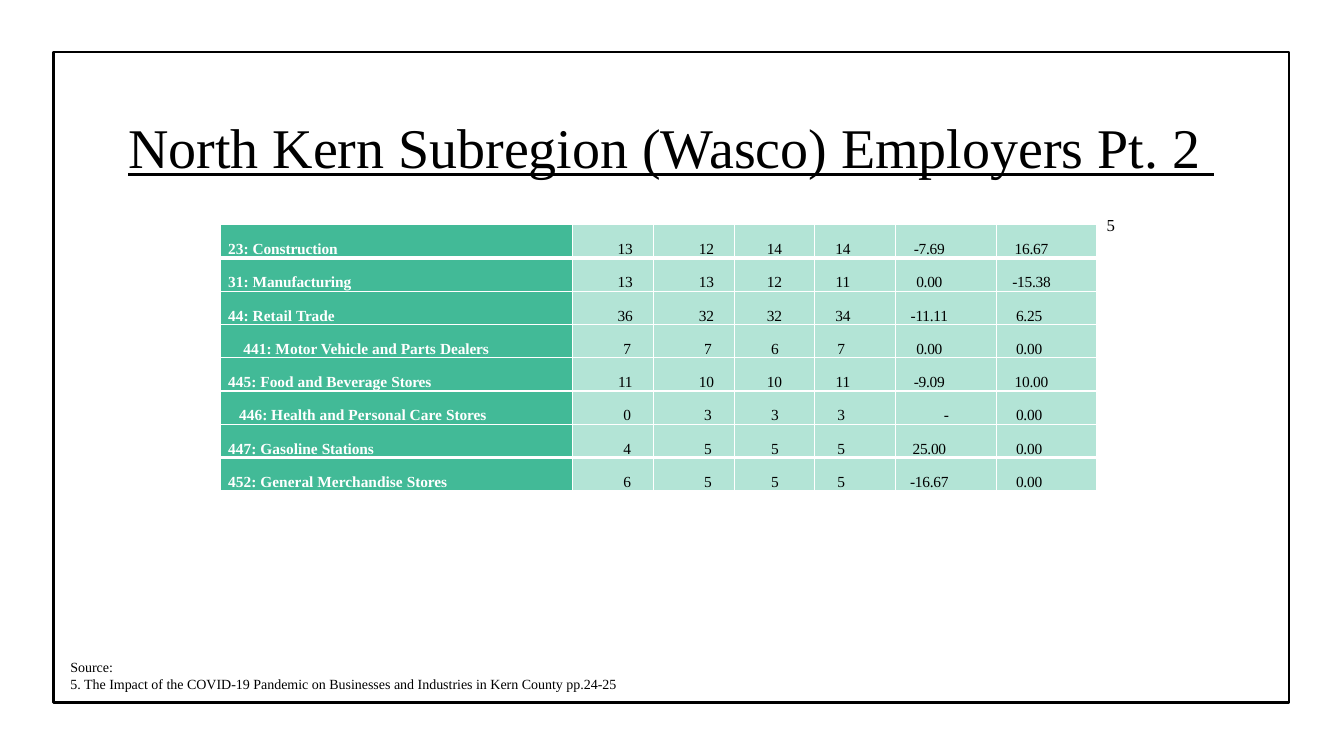
from lxml.etree import SubElement
from pptx import Presentation
from pptx.dml.color import RGBColor
from pptx.enum.shapes import MSO_SHAPE as Shape
from pptx.enum.text import MSO_ANCHOR as Anchor, PP_ALIGN as Align
from pptx.oxml.ns import qn
from pptx.util import Pt

COLORS = {"ink": "000000", "white": "FFFFFF", "label": "42BA97", "value": "B3E4D6"}
FONT = "Times New Roman"
TITLE = "North Kern Subregion (Wasco) Employers Pt. 2 "
SOURCE = [
    "Source:",
    "5. The Impact of the COVID-19 Pandemic on Businesses and Industries in Kern County pp.24-25",
]
FOOTNOTE_MARK = "5"

# Label start, label last word, values
EMPLOYERS = [
    ("23: ", "Construction", ["13", "12", "14", "14", "-7.69", "16.67"]),
    ("31: ", "Manufacturing", ["13", "13", "12", "11", "0.00", "-15.38"]),
    ("44: Retail ", "Trade", ["36", "32", "32", "34", "-11.11", "6.25"]),
    ("441: Motor Vehicle and Parts ", "Dealers", ["7", "7", "6", "7", "0.00", "0.00"]),
    ("445: Food and Beverage ", "Stores", ["11", "10", "10", "11", "-9.09", "10.00"]),
    ("446: Health and Personal Care ", "Stores", ["0", "3", "3", "3", "-", "0.00"]),
    ("447: Gasoline ", "Stations", ["4", "5", "5", "5", "25.00", "0.00"]),
    ("452: General Merchandise ", "Stores", ["6", "5", "5", "5", "-16.67", "0.00"]),
]
SUBGROUP_INDENTS = {3: (59.8, -43.2), 5: (62.6, -49)}  # row: left, first line
LABEL_INDENT = (5.8, 0)
COLUMN_WIDTHS = [252] + [57.6] * 4 + [72] * 2
ROW_HEIGHT = 23.76
RULE_WEIGHTS = [1, 3, 1, 1, 1, 1, 1, 3, 1]  # horizontal rules, top to bottom


def value_margins(column, text):
    """Left and right paragraph margins that line the numbers up in a column."""
    if text == "-":
        return 0.7, 0
    single = len(text) == 1
    return {
        1: (20 if single else 17.3, 0),
        2: (20 if single else 18, 0),
        3: (0.7, 0) if single else (7.2, 7.2),
        4: (0, 20 if single else 17.3),
        5: (0, 23.5),
        6: (0, 25 if len(text) == 4 else 21.6),
    }[column]


def add_run(para, text, size, color="ink", bold=False, underline=False, spacing=0):
    """Add one run; spacing is the letter spacing in points."""
    span = para.add_run()
    span.text = text
    font = span.font
    font.name, font.size, font.bold, font.underline = FONT, Pt(size), bold, underline
    font.color.rgb = RGBColor.from_string(COLORS[color])
    if spacing:
        font._element.set("spc", str(round(spacing * 100)))


def set_margins(para, left, right=0, first=0):
    properties = para._p.get_or_add_pPr()
    for name, length in (("marL", left), ("marR", right), ("indent", first)):
        properties.set(name, str(int(Pt(length))))


def set_borders(cell, row):
    properties = cell._tc.get_or_add_tcPr()
    weights = {"lnL": 1, "lnR": 1, "lnT": RULE_WEIGHTS[row], "lnB": RULE_WEIGHTS[row + 1]}
    for side, weight in weights.items():
        line = SubElement(properties, qn(f"a:{side}"), w=str(int(Pt(weight))))
        fill = SubElement(line, qn("a:solidFill"))
        SubElement(fill, qn("a:srgbClr"), val=COLORS["white"])


def prepare_cell(cell, row, color):
    """Style an empty cell and return its paragraph."""
    cell.margin_left = cell.margin_right = cell.margin_top = cell.margin_bottom = 0
    cell.vertical_anchor = Anchor.BOTTOM
    set_borders(cell, row)
    cell.fill.solid()
    cell.fill.fore_color.rgb = RGBColor.from_string(COLORS[color])
    return cell.text_frame.paragraphs[0]


def add_employer_table(page):
    frame = page.shapes.add_table(
        len(EMPLOYERS), len(COLUMN_WIDTHS), Pt(157.2), Pt(160.56),
        Pt(sum(COLUMN_WIDTHS)), Pt(ROW_HEIGHT * len(EMPLOYERS)))
    table = frame.table
    table.first_row = table.horz_banding = False
    for column, width in zip(table.columns, COLUMN_WIDTHS):
        column.width = Pt(width)
    for row, (start, last_word, values) in enumerate(EMPLOYERS):
        table.rows[row].height = Pt(ROW_HEIGHT)
        subgroup = row in SUBGROUP_INDENTS
        para = prepare_cell(table.cell(row, 0), row, "label")
        left, first = SUBGROUP_INDENTS.get(row, LABEL_INDENT)
        set_margins(para, left, first=first)
        para.line_spacing = Pt(11.5 if subgroup else 10.5)
        add_run(para, start, 11, "white", bold=True)
        add_run(para, last_word, 11, "white", bold=True, spacing=-0.1)
        for column, text in enumerate(values, 1):
            para = prepare_cell(table.cell(row, column), row, "value")
            para.alignment = Align.CENTER
            set_margins(para, *value_margins(column, text))
            if subgroup:
                para.space_before = Pt(5.8)
            else:
                para.line_spacing = Pt(10.5)
            add_run(para, text, 11, spacing=0 if len(text) == 1 else -0.2)


def add_text(page, area, lines, size, underline=False):
    box = page.shapes.add_textbox(*map(Pt, area))
    frame = box.text_frame
    frame.word_wrap = True
    for index, line in enumerate(lines):
        para = frame.add_paragraph() if index else frame.paragraphs[0]
        add_run(para, line, size, underline=underline)
    return frame


def main():
    deck = Presentation()
    deck.slide_width, deck.slide_height = Pt(960), Pt(540)
    page = deck.slides.add_slide(deck.slide_layouts[6])

    add_employer_table(page)
    title = add_text(page, (29.5, 67, 900, 80.6), [TITLE], 40, underline=True)
    title.vertical_anchor = Anchor.MIDDLE
    title.paragraphs[0].alignment = Align.CENTER
    title.paragraphs[0].line_spacing = 0.9
    add_text(page, (43.2, 466.6, 886.3, 31.7), SOURCE, 10)
    add_text(page, (783.4, 149.8, 36, 21.6), [FOOTNOTE_MARK], 12)

    border = page.shapes.add_shape(Shape.RECTANGLE, Pt(38.2), Pt(37.4), Pt(882.7), Pt(464.4))
    border.shadow.inherit = False
    border.fill.background()
    border.line.color.rgb = RGBColor.from_string(COLORS["ink"])
    border.line.width = Pt(1.5)

    deck.save("out.pptx")


if __name__ == "__main__":
    main()
